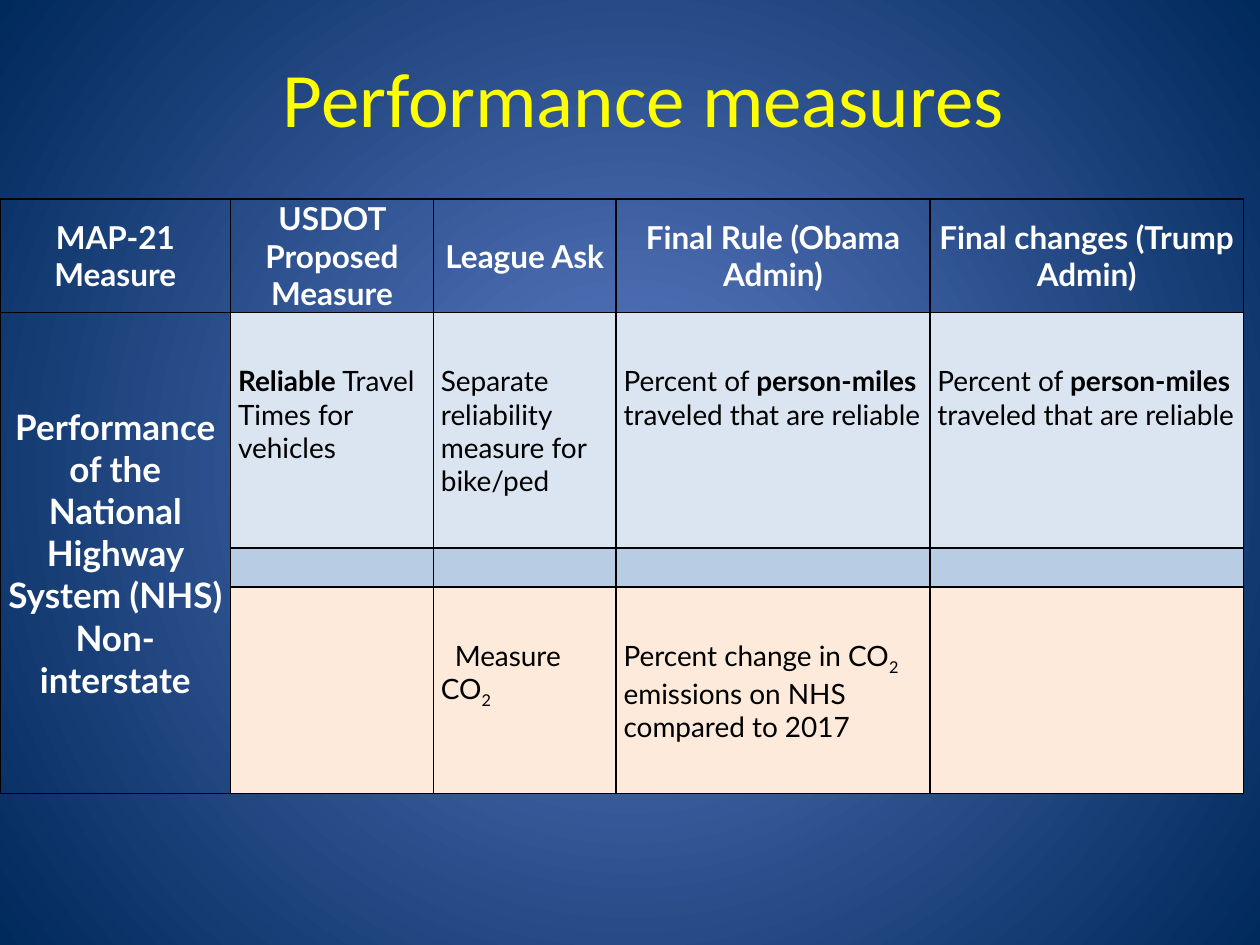
from lxml.etree import SubElement
from pptx import Presentation
from pptx.dml.color import RGBColor
from pptx.enum.text import MSO_ANCHOR as ANCHOR, PP_ALIGN as ALIGN
from pptx.oxml.ns import qn
from pptx.util import Inches, Pt

COLORS = {
    "glow": "5E7CC5", "navy": "00295C", "title": "FFFF00", "head": "FFFFFF",
    "body": "000000", "border": "000000",
    "blue": "DBE5F1", "band": "B8CCE4", "peach": "FDEADA",
}
COLS = [1.83, 1.61, 1.45, 2.49, 2.49]
ROWS = [0.9, 1.87, 0.31, 1.64]
ROW_FILLS = [None, "blue", "band", "peach"]
HEADERS = ["MAP-21 Measure", "USDOT Proposed Measure", "League Ask",
           "Final Rule (Obama Admin)", "Final changes (Trump Admin)"]
GOAL = "Performance of the National Highway System (NHS) Non- interstate"
PERSON_MILES = [("Percent of ", ""), ("person-miles ", "bold"),
                ("traveled that are reliable", "")]
BODY = {
    (1, 1): [("Reliable", "bold"), (" Travel Times for vehicles", "")],
    (1, 2): [("Separate reliability measure for bike/ped", "")],
    (1, 3): PERSON_MILES,
    (1, 4): PERSON_MILES,
    (3, 2): [("Measure CO", ""), ("2", "sub")],
    (3, 3): [("Percent change in CO", ""), ("2", "sub"),
             (" emissions on NHS compared to 2017", "")],
}


class Deck:
    """Slide builder that holds the style and the current slide."""

    def __init__(self):
        self.prs = Presentation()
        self.prs.slide_width, self.prs.slide_height = Inches(10), Inches(7.5)
        self.s = self.prs.slides.add_slide(self.prs.slide_layouts[5])

    def color(self, name):
        return RGBColor.from_string(COLORS[name])

    def background(self, inner, outer):
        fill = self.s.background.fill
        fill.gradient()
        for stop, name, pos in zip(fill.gradient_stops, (inner, outer), (0, 1)):
            stop.color.rgb = self.color(name)
            stop.position = pos
        grad = self.s.element.find(".//" + qn("a:gradFill"))
        grad.remove(grad.find(qn("a:lin")))
        path = SubElement(grad, qn("a:path"), {"path": "circle"})
        SubElement(path, qn("a:fillToRect"), dict.fromkeys("ltrb", "50000"))

    def font(self, r, size, color, name="Lato", bold=False):
        r.font.size, r.font.name, r.font.bold = Pt(size), name, bold
        r.font.color.rgb = self.color(color)

    def title(self, text, left, top, width, height):
        sp = self.s.shapes.title
        sp.left, sp.top = Inches(left), Inches(top)
        sp.width, sp.height = Inches(width), Inches(height)
        tf = sp.text_frame
        tf.text = text
        tf.vertical_anchor = ANCHOR.MIDDLE
        p = tf.paragraphs[0]
        p.alignment = ALIGN.CENTER
        self.font(p.runs[0], 44, "title", "Calibri")

    def table(self, left, top, cols, rows):
        frame = self.s.shapes.add_table(len(rows), len(cols), Inches(left), Inches(top),
                                        Inches(sum(cols)), Inches(sum(rows)))
        tbl = frame.table
        tbl.first_row = tbl.horz_banding = False
        for col, width in zip(tbl.columns, cols):
            col.width = Inches(width)
        for row, height in zip(tbl.rows, rows):
            row.height = Inches(height)
        return tbl

    def cell(self, cell, fill=None):
        cell.margin_left = cell.margin_right = Inches(0.06)
        cell.margin_top = cell.margin_bottom = 0
        tc_pr = cell._tc.get_or_add_tcPr()
        for side in ("lnL", "lnR", "lnT", "lnB"):
            ln = SubElement(tc_pr, qn("a:" + side), {"w": str(Pt(1))})
            solid = SubElement(ln, qn("a:solidFill"))
            SubElement(solid, qn("a:srgbClr"), {"val": COLORS["border"]})
        if fill:
            cell.fill.solid()
            cell.fill.fore_color.rgb = self.color(fill)
        else:
            cell.fill.background()

    def heading(self, cell, text, size):
        cell.text = text
        cell.vertical_anchor = ANCHOR.MIDDLE
        p = cell.text_frame.paragraphs[0]
        p.alignment = ALIGN.CENTER
        self.font(p.runs[0], size, "head", bold=True)

    def body(self, cell, parts, indent=0):
        cell.margin_top = Inches(0.41)
        p = cell.text_frame.paragraphs[0]
        p._p.get_or_add_pPr().set("indent", str(Inches(indent)))
        for text, style in parts:
            r = p.add_run()
            r.text = text
            self.font(r, 16, "body", bold=style == "bold")
            if style == "sub":
                r._r.get_or_add_rPr().set("baseline", "-25000")


def main():
    deck = Deck()
    deck.background("glow", "navy")
    deck.title("Performance measures", 0.57, 0.31, 9.08, 0.92)
    tbl = deck.table(0, 1.58, COLS, ROWS)
    for i, fill in enumerate(ROW_FILLS):
        for j in range(len(COLS)):
            deck.cell(tbl.cell(i, j), fill if j else None)
    for j, text in enumerate(HEADERS):
        deck.heading(tbl.cell(0, j), text, 18)
    tbl.cell(1, 0).merge(tbl.cell(3, 0))
    deck.heading(tbl.cell(1, 0), GOAL, 20)
    for (i, j), parts in BODY.items():
        deck.body(tbl.cell(i, j), parts, 0.11 if (i, j) == (3, 2) else 0)
    deck.prs.save("out.pptx")


if __name__ == "__main__":
    main()
